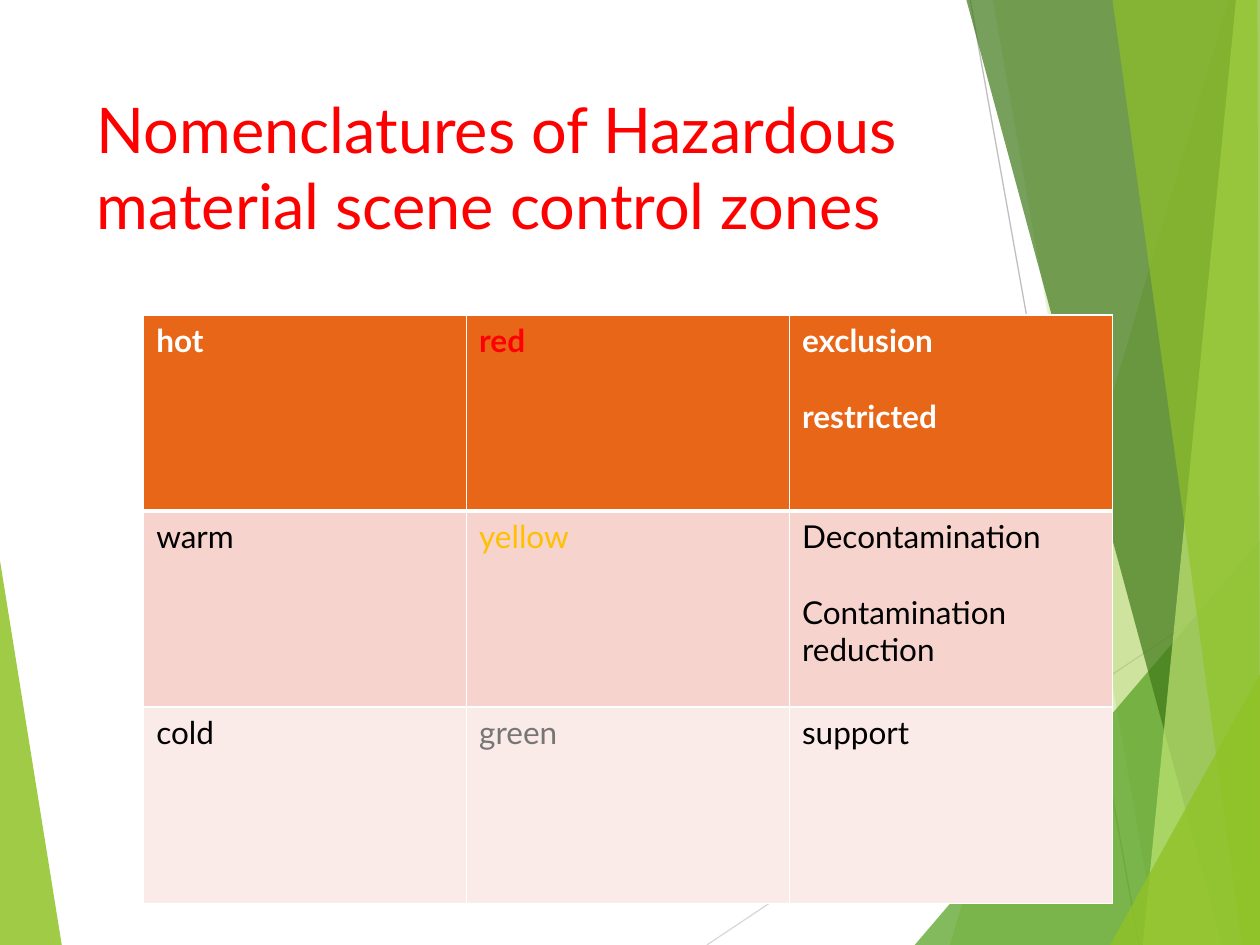
from lxml.etree import SubElement
from pptx import Presentation
from pptx.dml.color import RGBColor
from pptx.enum.shapes import MSO_CONNECTOR
from pptx.enum.text import MSO_ANCHOR
from pptx.oxml.ns import qn
from pptx.util import Inches, Pt

FONT = "Lato"
WHITE = RGBColor(0xFF, 0xFF, 0xFF)
BLACK = RGBColor(0x00, 0x00, 0x00)
RED = RGBColor(0xFF, 0x00, 0x00)
YELLOW = RGBColor(0xFF, 0xC0, 0x00)
GRAY = RGBColor(0x76, 0x76, 0x76)
ORANGE = RGBColor(0xE7, 0x66, 0x18)
PINK = RGBColor(0xF6, 0xD3, 0xCC)
PALE_PINK = RGBColor(0xFA, 0xEA, 0xE8)
LIME = RGBColor(0x90, 0xC2, 0x26)
LEAF = RGBColor(0x54, 0xA0, 0x21)
FOREST = RGBColor(0x3F, 0x78, 0x19)
LIGHT_LIME = RGBColor(0xC0, 0xE4, 0x74)
LIGHT_LINE = RGBColor(0xD9, 0xD9, 0xD9)
DARK_LINE = RGBColor(0xBF, 0xBF, 0xBF)

TITLE = "Nomenclatures of Hazardous material scene control zones"

# Each row: fill, text colours by column, paragraphs by column
ZONES = [
    (ORANGE, (WHITE, RED, WHITE),
     (["hot"], ["red"], ["exclusion", "restricted"])),
    (PINK, (BLACK, YELLOW, BLACK),
     (["warm"], ["yellow"], ["Decontamination", "Contamination reduction"])),
    (PALE_PINK, (BLACK, GRAY, BLACK),
     (["cold"], ["green"], ["support"])),
]

# Background facets: colour, opacity in percent, corners in inches
LEFT_FACET = (LIME, 85, [(0, 4.45), (0.49, 7.5), (0, 7.5)])
RIGHT_FACETS = [
    (LIME, 30, [(9.75, 0), (7.54, 7.5), (10, 7.5), (10, 0)]),
    (LIME, 20, [(7.88, 0), (9.19, 7.5), (10, 7.5), (10, 0)]),
    (LEAF, 72, [(7.26, 7.5), (10, 4.29), (10, 7.5)]),
    (FOREST, 70, [(7.67, 0), (9.7, 7.5), (10, 7.5), (10, 0)]),
    (LIGHT_LIME, 70, [(9.81, 0), (9.07, 7.5), (10, 7.5), (10, 0)]),
    (LIME, 65, [(8.83, 0), (9.86, 7.5), (10, 7.5), (9.98, 0)]),
    (LIME, 80, [(8.81, 7.5), (10, 5.35), (10, 7.5)]),
]
# Background lines: colour, start x, start y, end x, end y
LINES = [
    (LIGHT_LINE, 5.61, 7.5, 10, 4.57),
    (DARK_LINE, 7.7, 0, 9.04, 7.5),
]


def add_facet(slide, color, opacity, corners):
    points = [(Inches(x), Inches(y)) for x, y in corners]
    builder = slide.shapes.build_freeform(*points[0])
    builder.add_line_segments(points[1:], close=True)
    shape = builder.convert_to_shape()
    shape.shadow.inherit = False
    shape.line.fill.background()
    shape.fill.solid()
    shape.fill.fore_color.rgb = color
    color_node = shape._element.spPr.find(qn("a:solidFill"))[0]
    SubElement(color_node, qn("a:alpha"), val=str(opacity * 1000))


def add_line(slide, color, *ends):
    line = slide.shapes.add_connector(MSO_CONNECTOR.STRAIGHT, *map(Inches, ends))
    line.line.color.rgb = color
    line.line.width = Pt(0.75)
    SubElement(line._element.spPr, qn("a:effectLst"))


def format_paragraph(paragraph, size, color, bold=False):
    font = paragraph.runs[0].font
    font.name, font.size, font.bold = FONT, Pt(size), bold
    font.color.rgb = color


def set_borders(cell, bottom_width):
    properties = cell._tc.get_or_add_tcPr()
    widths = {"a:lnL": 1, "a:lnR": 1, "a:lnT": 1, "a:lnB": bottom_width}
    for index, (tag, width) in enumerate(widths.items()):
        border = SubElement(properties, qn(tag), w=str(Pt(width)))
        fill = SubElement(border, qn("a:solidFill"))
        SubElement(fill, qn("a:srgbClr"), val=str(WHITE))
        properties.insert(index, border)  # borders come before the fill


def add_title(slide):
    box = slide.shapes.add_textbox(Inches(0.67), Inches(0.67), Inches(6.94), Inches(1.44))
    frame = box.text_frame
    frame.word_wrap = True
    frame.vertical_anchor = MSO_ANCHOR.TOP
    frame.text = TITLE
    format_paragraph(frame.paragraphs[0], 36, RED)


def add_zone_table(slide):
    table = slide.shapes.add_table(len(ZONES), 3, Inches(1.14), Inches(2.5),
                                   Inches(7.69), Inches(4.67)).table
    for row, (fill, colors, texts) in enumerate(ZONES):
        is_header = row == 0
        for column, (color, lines) in enumerate(zip(colors, texts)):
            cell = table.cell(row, column)
            cell.fill.solid()
            cell.fill.fore_color.rgb = fill
            # The rule under the header is thicker, seen from both sides
            set_borders(cell, 3 if is_header else 1)
            cell.text_frame.text = "\n".join(lines)
            for index, paragraph in enumerate(cell.text_frame.paragraphs):
                format_paragraph(paragraph, 18, color, is_header)
                if index:
                    paragraph.space_before = Pt(21.6)


def main():
    presentation = Presentation()
    presentation.slide_width = Inches(10)
    presentation.slide_height = Inches(7.5)
    slide = presentation.slides.add_slide(presentation.slide_layouts[6])

    # Background
    add_facet(slide, *LEFT_FACET)
    for line in LINES:
        add_line(slide, *line)
    for facet in RIGHT_FACETS:
        add_facet(slide, *facet)

    # Content
    add_title(slide)
    add_zone_table(slide)
    presentation.save("out.pptx")


if __name__ == "__main__":
    main()
